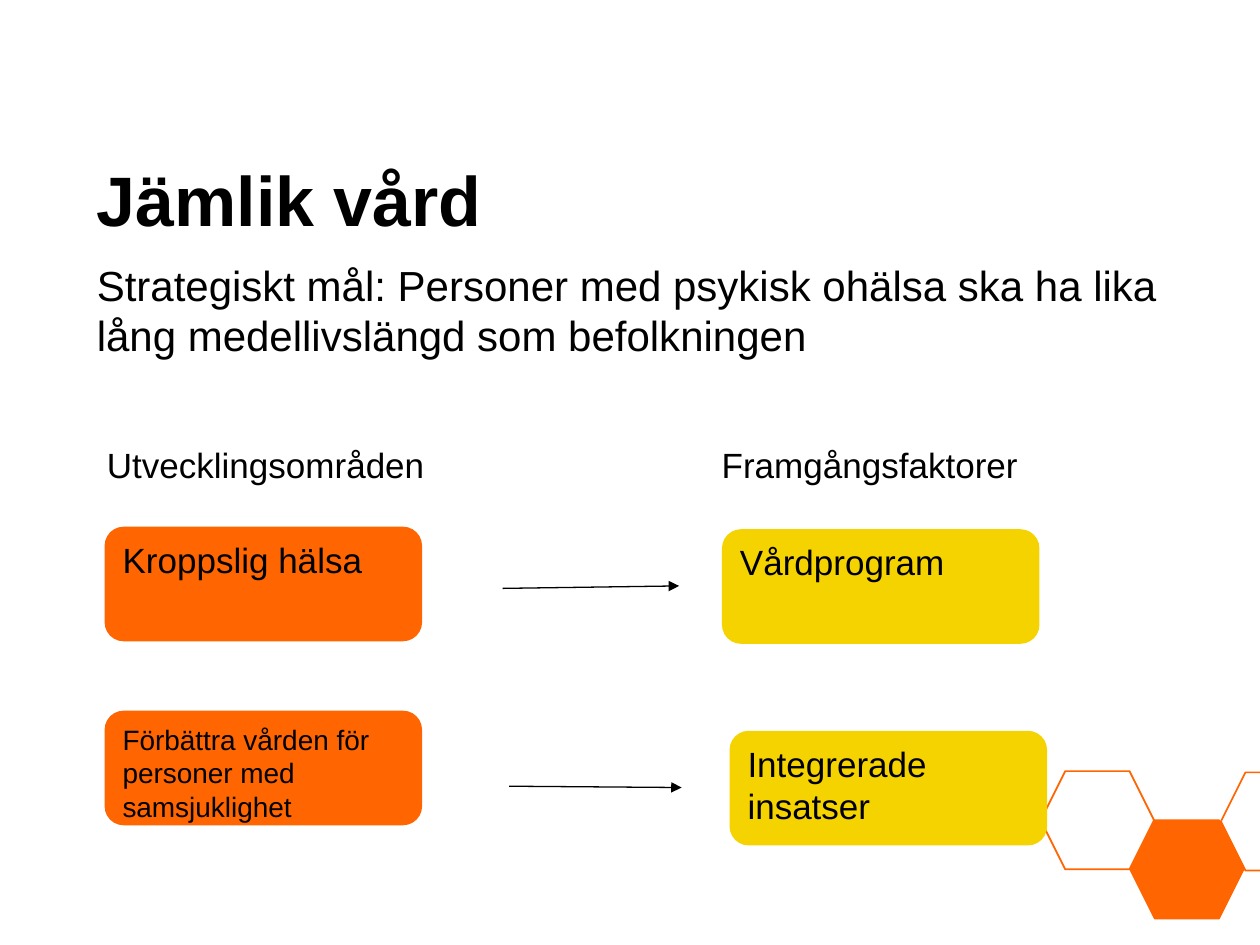
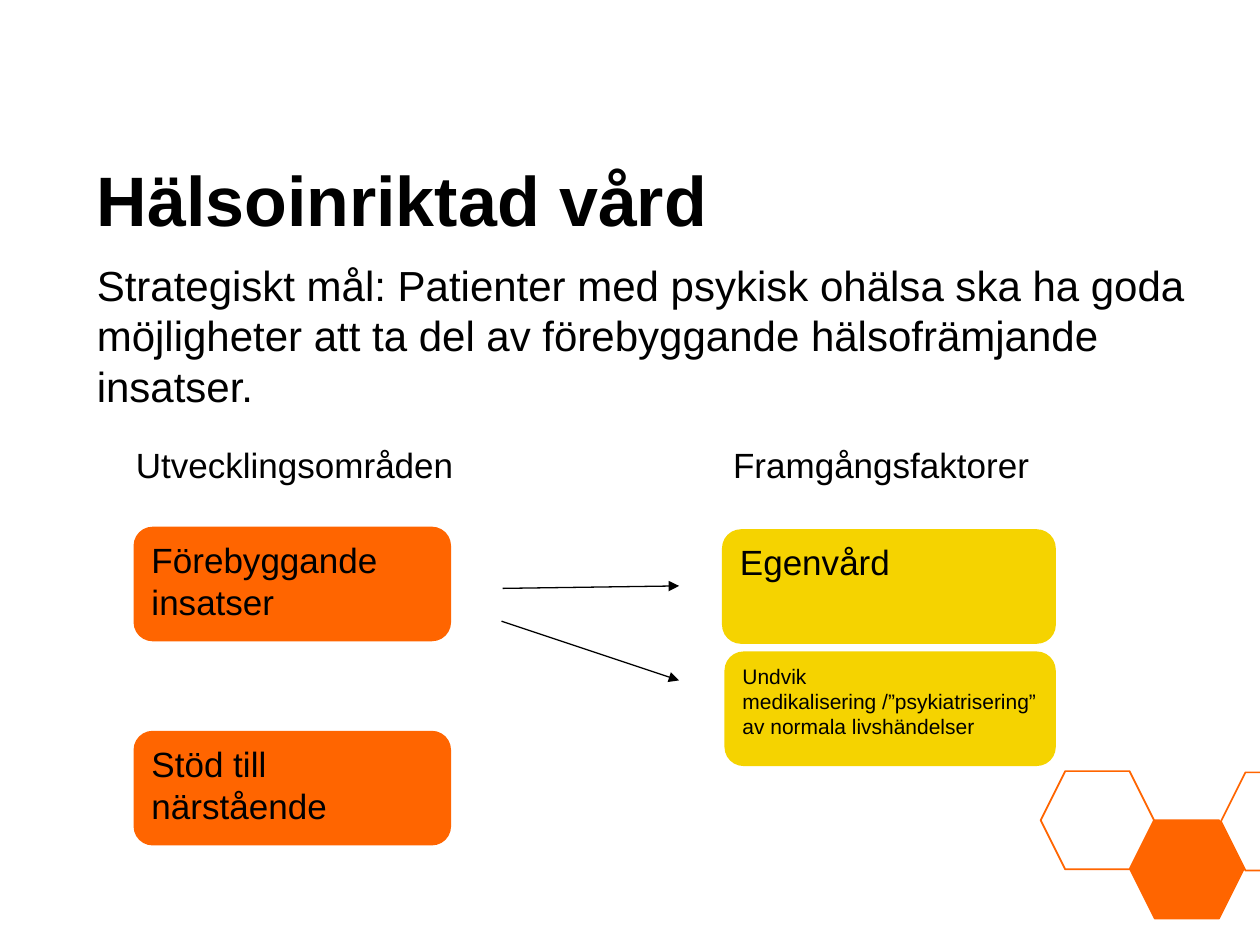
"""Builds two slides linking development areas of care to success factors."""
from dataclasses import dataclass

from lxml import etree
from pptx import Presentation
from pptx.dml.color import RGBColor
from pptx.enum import shapes, text
from pptx.oxml import ns
from pptx.util import Inches, Pt


@dataclass(frozen=True)
class Theme:
    """Colours, font and type sizes shared by the slides."""
    font: str = "Arial"
    ink: RGBColor = RGBColor(0x00, 0x00, 0x00)
    paper: RGBColor = RGBColor(0xFF, 0xFF, 0xFF)
    area: RGBColor = RGBColor(0xFF, 0x65, 0x00)
    factor: RGBColor = RGBColor(0xF5, 0xD3, 0x00)
    title: int = 40
    goal: int = 24
    body: int = 20
    small: int = 16
    tiny: int = 12


THEME = Theme()
CARD_HEIGHT = 0.91
CARD_WIDTH = 2.52
HEADING_TOP = 3.47
TOP_ARROW = ((3.99, 4.67), (5.39, 4.65))


def write(shape, wording, size, bold=False, anchor=text.MSO_ANCHOR.TOP):
    """Put left-aligned wording in a shape in the theme font."""
    frame = shape.text_frame
    frame.word_wrap = True
    frame.vertical_anchor = anchor
    frame.text = wording
    paragraph = frame.paragraphs[0]
    paragraph.alignment = text.PP_ALIGN.LEFT
    font = paragraph.runs[0].font
    font.name, font.size, font.bold = THEME.font, Pt(size), bold
    font.color.rgb = THEME.ink


def add_label(slide, wording, box, size, **style):
    """Add plain text in a box given in inches."""
    write(slide.shapes.add_textbox(*map(Inches, box)), wording, size, **style)


def add_filled(slide, preset, box, fill):
    """Add a flat preset shape without an outline."""
    shape = slide.shapes.add_shape(preset, *map(Inches, box))
    shape.shadow.inherit = False
    shape.fill.solid()
    shape.fill.fore_color.rgb = fill
    shape.line.fill.background()
    return shape


def add_card(slide, wording, left, top, fill, size=THEME.body, width=CARD_WIDTH):
    """Add a rounded card holding one area or factor."""
    card = add_filled(slide, shapes.MSO_SHAPE.ROUNDED_RECTANGLE,
                      (left, top, width, CARD_HEIGHT), fill)
    write(card, wording, size)


def add_arrow(slide, start, end):
    """Add a thin arrow leading from an area to a factor."""
    arrow = slide.shapes.add_connector(shapes.MSO_CONNECTOR.STRAIGHT,
                                       *map(Inches, (*start, *end)))
    arrow.line.color.rgb = THEME.ink
    arrow.line.width = Pt(0.75)
    etree.SubElement(arrow.line._get_or_add_ln(), ns.qn("a:tailEnd"), type="triangle")
    etree.SubElement(arrow._element.spPr, ns.qn("a:effectLst"))


def add_honeycomb(slide):
    """Add the hexagon cluster in the lower right corner."""
    for left, top, fill in ((8.26, 6.12, THEME.paper),
                            (8.97, 6.51, THEME.area),
                            (9.69, 6.13, THEME.paper)):
        cell = add_filled(slide, shapes.MSO_SHAPE.HEXAGON, (left, top, 0.9, 0.78), fill)
        cell.adjustments[0] = 0.25
        cell.line.color.rgb = THEME.area
        cell.line.width = Pt(1)


def add_care_slide(deck, title, goal, area_heading_left, factor_heading_left):
    """Add a slide with honeycomb, title, strategic goal and column headings."""
    slide = deck.slides.add_slide(deck.slide_layouts[6])
    add_honeycomb(slide)
    add_label(slide, title, (0.67, 1.15, 9, 0.85), THEME.title,
              bold=True, anchor=text.MSO_ANCHOR.MIDDLE)
    add_label(slide, f"Strategiskt mål: {goal}", (0.67, 2.01, 9, 0.91), THEME.goal)
    add_label(slide, "Utvecklingsområden",
              (area_heading_left, HEADING_TOP, 2.83, 0.44), THEME.body)
    add_label(slide, "Framgångsfaktorer",
              (factor_heading_left, HEADING_TOP, 2.67, 0.44), THEME.body)
    add_arrow(slide, *TOP_ARROW)
    return slide


def build_equal_care(deck):
    """Build the slide on equal care."""
    slide = add_care_slide(
        deck, "Jämlik vård",
        "Personer med psykisk ohälsa ska ha lika lång medellivslängd som befolkningen",
        0.75, 5.63)
    add_card(slide, "Kroppslig hälsa", 0.83, 4.18, THEME.area)
    add_card(slide, "Förbättra vården för personer med samsjuklighet",
             0.83, 5.64, THEME.area, THEME.small)
    add_card(slide, "Vårdprogram", 5.73, 4.2, THEME.factor)
    add_card(slide, "Integrerade insatser", 5.79, 5.8, THEME.factor)
    add_arrow(slide, (4.04, 6.24), (5.41, 6.25))


def build_health_care(deck):
    """Build the slide on health-oriented care."""
    slide = add_care_slide(
        deck, "Hälsoinriktad vård",
        "Patienter med psykisk ohälsa ska ha goda möjligheter att ta del av "
        "förebyggande hälsofrämjande insatser.",
        0.98, 5.72)
    add_card(slide, "Förebyggande insatser", 1.06, 4.18, THEME.area)
    add_card(slide, "Stöd till närstående", 1.06, 5.8, THEME.area)
    add_card(slide, "Egenvård", 5.73, 4.2, THEME.factor, width=2.65)
    add_card(slide, "Undvik medikalisering /”psykiatrisering” av normala livshändelser",
             5.75, 5.17, THEME.factor, THEME.tiny, width=2.63)
    add_arrow(slide, (3.98, 4.93), (5.39, 5.4))


def main():
    """Create the deck and save it."""
    deck = Presentation()
    deck.slide_width, deck.slide_height = Inches(10), Inches(7.5)
    build_equal_care(deck)
    build_health_care(deck)
    deck.save("out.pptx")


if __name__ == "__main__":
    main()
